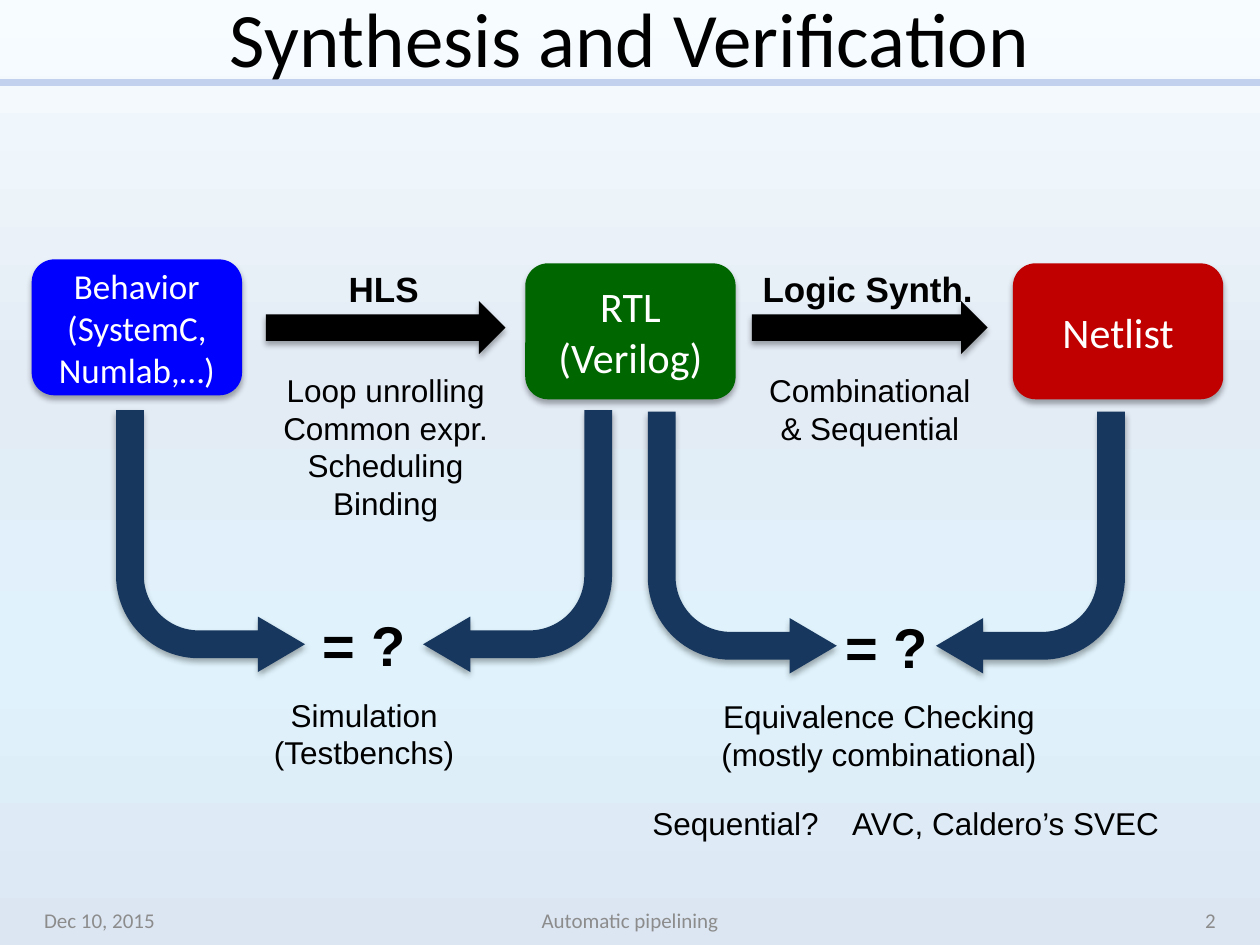
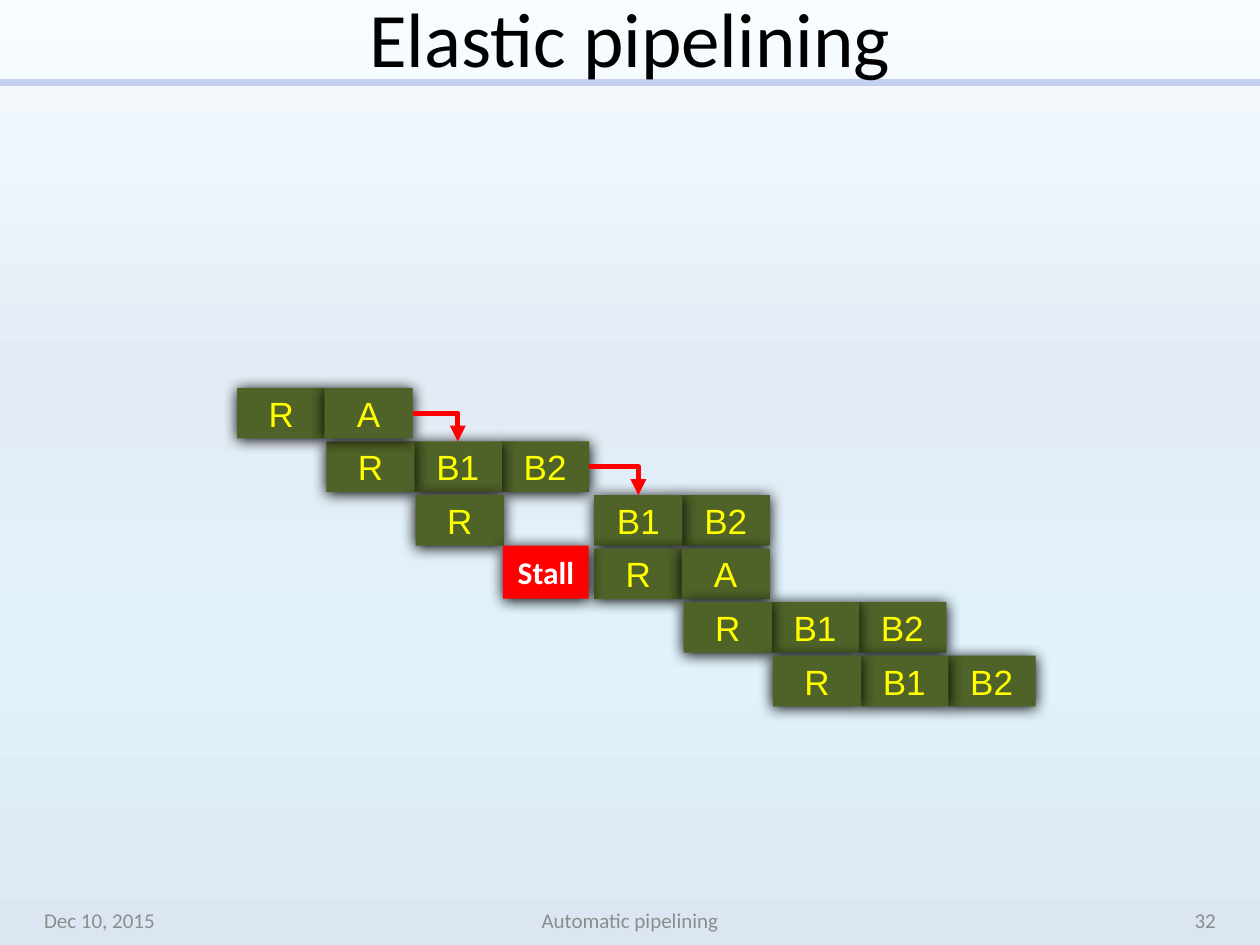
from collections import namedtuple
from dataclasses import dataclass

from lxml.etree import SubElement
from pptx import Presentation
from pptx.dml.color import RGBColor
from pptx.enum.shapes import MSO_CONNECTOR as Connector, MSO_SHAPE as Shape
from pptx.enum.text import MSO_ANCHOR as Anchor, PP_ALIGN as Align
from pptx.oxml.ns import qn
from pptx.util import Cm, Pt

Box = namedtuple("Box", "left top width height")  # centimetres
Shadow = namedtuple("Shadow", "opacity blur distance")


@dataclass(frozen=True)
class Theme:
    heading_font: str = "Calibri"
    label_font: str = "Arial"
    title_size: int = 44
    mark_size: int = 32
    stage_size: int = 24
    name_size: int = 20
    note_size: int = 18
    footer_size: int = 12
    ink: str = "000000"
    paper: str = "FFFFFF"
    muted: str = "8C8C8C"
    rule: str = "C2D1ED"
    behavior: str = "0000FF"
    rtl: str = "006600"
    netlist: str = "C00000"
    check: str = "17375E"
    cell: str = "4F6228"
    cell_ink: str = "FFFF00"
    alert: str = "FF0000"
    backdrop: tuple = ((0, "F7FDFF"), (40, "E3EBF5"), (70, "E0F3FC"), (100, "DCE6F2"))
    soft: Shadow = Shadow(32, 3.5, 2.2)
    glow: Shadow = Shadow(100, 8.5, 1)


THEME = Theme()


def lengths(box):
    return [Cm(round(value, 2)) for value in box]


def write(shape, text, size=THEME.note_size, font=THEME.label_font, color=THEME.ink,
          bold=False, align=Align.CENTER, anchor=Anchor.MIDDLE, wrap=True):
    """Fill a shape with text, one paragraph per line."""
    frame = shape.text_frame
    frame.word_wrap = wrap
    frame.vertical_anchor = anchor
    for index, line in enumerate(text.split("\n")):
        para = frame.add_paragraph() if index else frame.paragraphs[0]
        para.alignment = align
        span = para.add_run()
        span.text = line
        span.font.size = Pt(size)
        span.font.name = font
        span.font.bold = bold
        span.font.color.rgb = RGBColor.from_string(color)


def add_label(page, box, text, **style):
    write(page.shapes.add_textbox(*lengths(box)), text, **style)


def add_note(page, box, text, **style):
    add_label(page, box, text, anchor=Anchor.TOP, wrap=False, **style)


def add_block(page, kind, box, color, shadow=THEME.soft):
    """Add a filled shape without outline that casts its shadow downwards."""
    block = page.shapes.add_shape(kind, *lengths(box))
    block.fill.solid()
    block.fill.fore_color.rgb = RGBColor.from_string(color)
    block.line.fill.background()
    block.shadow.inherit = False
    effects = block.element.spPr.find(qn("a:effectLst"))
    outer = SubElement(effects, qn("a:outerShdw"), blurRad=str(Pt(shadow.blur)),
                       dist=str(Pt(shadow.distance)), dir="5400000", rotWithShape="0")
    tint = SubElement(outer, qn("a:srgbClr"), val=THEME.ink)
    SubElement(tint, qn("a:alpha"), val=str(shadow.opacity * 1000))
    return block


def add_line(page, start, end, color, width, kind=Connector.STRAIGHT):
    line = page.shapes.add_connector(kind, *lengths(start + end))
    line.line.color.rgb = RGBColor.from_string(color)
    line.line.width = Pt(width)
    SubElement(line.element.spPr, qn("a:effectLst"))
    return line


def paint_backdrop(page):
    fill = page.background.fill
    fill.gradient()
    fill.gradient_angle = 270
    stops = page.element.find(".//" + qn("a:gsLst"))
    for stop in list(stops):
        stops.remove(stop)
    for position, color in THEME.backdrop:
        stop = SubElement(stops, qn("a:gs"), pos=str(position * 1000))
        SubElement(stop, qn("a:srgbClr"), val=color)


def add_page(deck, title, number):
    """Add a page with backdrop, title, rule and footer."""
    page = deck.slides.add_slide(deck.slide_layouts[6])
    paint_backdrop(page)
    add_line(page, (0, 1.66), (25.4, 1.66), THEME.rule, 4)
    add_label(page, Box(1.27, -0.2, 22.86, 1.9), title,
              size=THEME.title_size, font=THEME.heading_font)
    footers = (
        (0.64, 5.93, "Dec 10, 2015", Align.LEFT),
        (8.68, 8.04, "Automatic pipelining", Align.CENTER),
        (18.83, 5.93, str(number), Align.RIGHT),
    )
    for left, width, text, align in footers:
        add_label(page, Box(left, 18.03, width, 1.02), text, size=THEME.footer_size,
                  font=THEME.heading_font, color=THEME.muted, align=align)
    return page


def add_stage(page, box, text, color, size=THEME.stage_size):
    stage = add_block(page, Shape.ROUNDED_RECTANGLE, box, color)
    write(stage, text, size=size, font=THEME.heading_font, color=THEME.paper)


def add_step(page, box, name, notes):
    """Draw an arrow over the box, its name above and its notes below."""
    add_block(page, Shape.RIGHT_ARROW, box, THEME.ink)
    add_note(page, box._replace(left=box.left - 0.04, top=box.top - 0.8, height=1.12),
             name, size=THEME.name_size, bold=True)
    add_note(page, box._replace(top=box.top + 1.28, height=1.8), notes)


def add_check(page, box, caption, caption_shift=0):
    """Draw two bent arrows meeting at a question mark, with a caption."""
    arrow_width = 3.81
    right_edge = box.left + box.width - arrow_width
    for left, flips in ((box.left, ["flipV"]), (right_edge, ["flipH", "flipV"])):
        arrow = add_block(page, Shape.BENT_ARROW,
                          box._replace(left=left, width=arrow_width), THEME.check)
        for index, value in enumerate((0.147, 0.147, 0.25, 0.438)):
            arrow.adjustments[index] = value
        for flip in flips:
            arrow.element.spPr.xfrm.set(flip, "1")
    add_note(page, box._replace(top=box.top + 3.92, height=1.63), "= ?",
             size=THEME.mark_size, bold=True)
    add_note(page, box._replace(left=box.left + caption_shift,
                                top=box.top + 5.63, height=1.8), caption)


def build_synthesis(deck):
    page = add_page(deck, "Synthesis and Verification", 2)
    add_stage(page, Box(0.64, 5.23, 4.24, 2.74), "Behavior\n(SystemC,\nNumlab,…)",
              THEME.behavior, size=THEME.name_size)
    add_stage(page, Box(10.59, 5.31, 4.24, 2.74), "RTL\n(Verilog)", THEME.rtl)
    add_stage(page, Box(20.42, 5.31, 4.24, 2.74), "Netlist", THEME.netlist)
    add_step(page, Box(5.36, 6.07, 4.83, 1.07), "HLS",
             "Loop unrolling\nCommon expr.\nScheduling\nBinding")
    add_step(page, Box(15.16, 6.07, 4.75, 1.07), "Logic Synth.",
             "Combinational\n& Sequential")
    add_check(page, Box(2.34, 8.27, 10, 5.28), "Simulation\n(Testbenchs)")
    add_check(page, Box(13.06, 8.3, 9.62, 5.28),
              "Equivalence Checking\n(mostly combinational)", caption_shift=-0.15)
    add_note(page, Box(12.9, 16.08, 3.86, 1.02), "Sequential?", align=Align.LEFT)
    add_note(page, Box(16.93, 16.08, 6.7, 1.02), "AVC, Caldero’s SVEC",
             align=Align.LEFT)


def add_burst(page, box, stages):
    """Draw adjoining stages from the first cell's box; return their boxes."""
    boxes = {stage: box._replace(left=box.left + 1.76 * index)
             for index, stage in enumerate(stages)}
    order = reversed(stages) if "B2" in stages else stages
    for stage in order:
        cell = add_block(page, Shape.RECTANGLE, boxes[stage], THEME.cell, THEME.glow)
        write(cell, stage, size=THEME.name_size, color=THEME.cell_ink)
    return boxes


def add_forward(page, source, target):
    """Link the right side of one cell to the top of another."""
    start = (source.left + source.width, source.top + source.height / 2)
    end = (target.left + target.width / 2, target.top)
    link = add_line(page, start, end, THEME.alert, 3, Connector.ELBOW)
    properties = link.element.spPr
    properties.find(qn("a:prstGeom")).set("prst", "bentConnector2")
    SubElement(properties.find(qn("a:ln")), qn("a:tailEnd"), type="triangle")


def add_pipeline(page, box):
    """Lay out instruction rows on a time grid inside the box."""
    def slot(row, column):
        return Box(box.left + 1.8 * column, box.top + 1.08 * row, 1.78, 1.02)

    second = add_burst(page, slot(1, 1), ("R", "B1", "B2"))
    first = add_burst(page, slot(0, 0), ("R", "A"))
    third = add_burst(page, slot(2, 4), ("B1", "B2"))
    add_burst(page, slot(2, 2), ("R",))
    add_burst(page, slot(3, 4), ("R", "A"))
    for row in (4, 5):
        add_burst(page, slot(row, row + 1), ("R", "B1", "B2"))
    add_forward(page, first["A"], second["B1"])
    add_forward(page, second["B2"], third["B1"])
    stall = add_block(page, Shape.RECTANGLE, slot(3, 3)._replace(
        left=box.left + 5.36, top=box.top + 3.18, width=1.73, height=1.07),
        THEME.alert, THEME.glow)
    write(stall, "Stall", font=THEME.heading_font, color=THEME.paper,
          bold=True, wrap=False)


def build_pipelining(deck):
    page = add_page(deck, "Elastic pipelining", 32)
    add_pipeline(page, Box(4.78, 7.82, 16.1, 6.42))


def main():
    deck = Presentation()
    deck.slide_width, deck.slide_height = Cm(25.4), Cm(19.05)
    build_synthesis(deck)
    build_pipelining(deck)
    deck.save("out.pptx")


if __name__ == "__main__":
    main()
